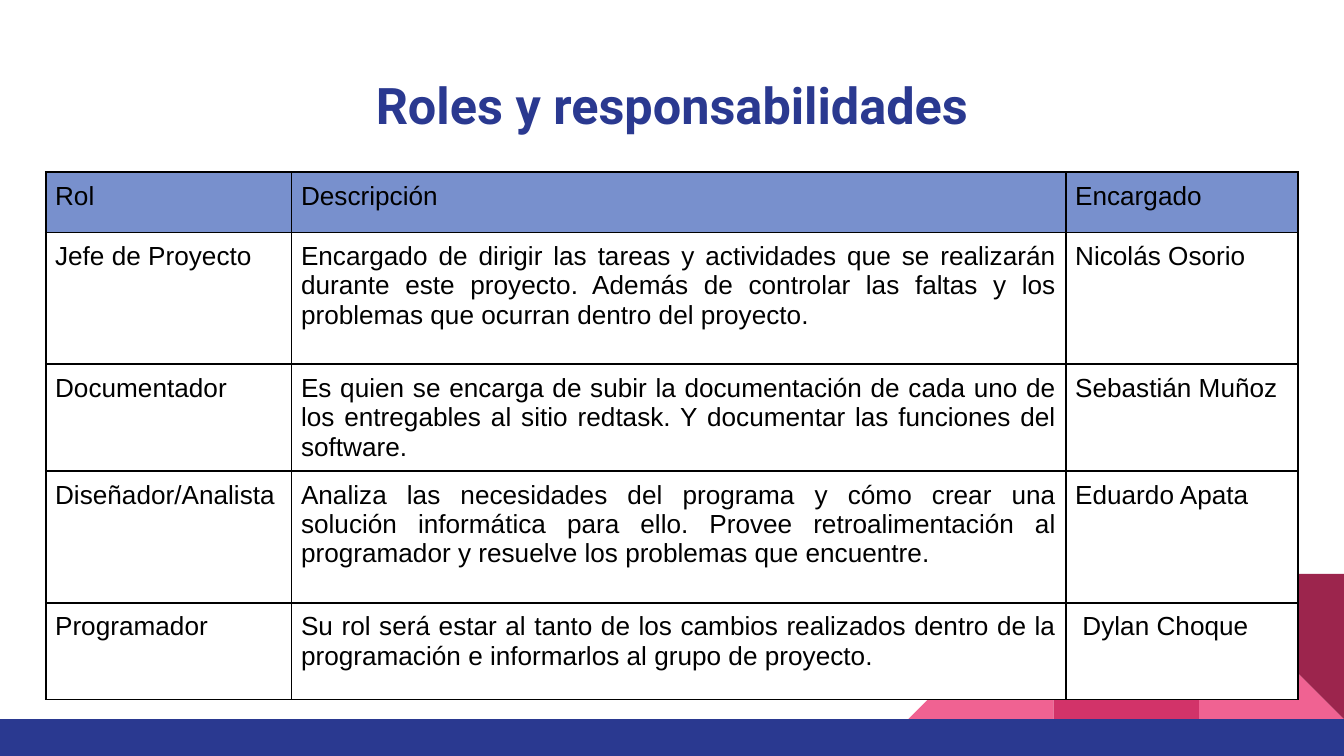
from lxml import etree
from pptx import Presentation
from pptx import util as u
from pptx.dml.color import RGBColor
from pptx.enum import shapes, text
from pptx.oxml.ns import qn

BLUE, PINK, ROSE, WINE = "2A3990", "F06292", "D23369", "9C254D"
HEADER, WHITE, BLACK = "7890CD", "FFFFFF", "000000"

COL_WIDTHS = [1.83, 5.76, 1.73]
ROW_HEIGHTS = [0.45, 0.98, 0.79, 0.98, 0.72]
ROLES = [
    ("Rol", "Descripción", "Encargado"),
    ("Jefe de Proyecto",
     "Encargado de dirigir las tareas y actividades que se realizarán durante "
     "este proyecto. Además de controlar las faltas y los problemas que "
     "ocurran dentro del proyecto.",
     "Nicolás Osorio"),
    ("Documentador",
     "Es quien se encarga de subir la documentación de cada uno de los "
     "entregables al sitio redtask. Y documentar las funciones del software.",
     "Sebastián Muñoz"),
    ("Diseñador/Analista",
     "Analiza las necesidades del programa y cómo crear una solución "
     "informática para ello. Provee retroalimentación al programador y "
     "resuelve los problemas que encuentre.",
     "Eduardo Apata"),
    ("Programador",
     "Su rol será estar al tanto de los cambios realizados dentro de la "
     "programación e informarlos al grupo de proyecto.",
     " Dylan Choque"),
]


def rgb(value):
    return RGBColor.from_string(value)


def format_text(p, font, size, color, align, bold=False):
    p.alignment = align
    for r in p.runs:
        r.font.name = font
        r.font.size = u.Pt(size)
        r.font.bold = bold
        r.font.color.rgb = rgb(color)


def add_block(s, kind, box, color, rotation=0, flip=False):
    sp = s.shapes.add_shape(kind, *map(u.Inches, box))
    sp.shadow.inherit = False
    sp.fill.solid()
    sp.fill.fore_color.rgb = rgb(color)
    sp.line.fill.background()
    sp.rotation = rotation
    if flip:
        sp._element.spPr.xfrm.set("flipH", "1")


def add_corner_art(s):
    side, top, right = 1.08, 4.27, 8.92
    tri, rect = shapes.MSO_SHAPE.RIGHT_TRIANGLE, shapes.MSO_SHAPE.RECTANGLE
    add_block(s, tri, (right, top, side, side), PINK)
    add_block(s, tri, (right - 2 * side, top, side, side), PINK, flip=True)
    add_block(s, rect, (right - side, top, side, side), ROSE)
    add_block(s, tri, (right, top, side, side), WINE, rotation=180)
    add_block(s, rect, (0, 5.35, 10, 0.28), BLUE)


def set_title(s, title):
    sp = s.shapes.title
    sp.left, sp.top, sp.width, sp.height = map(u.Inches, (0.34, 0.45, 9.32, 1.09))
    tf = sp.text_frame
    tf.text = title
    tf.word_wrap = True
    tf.auto_size = text.MSO_AUTO_SIZE.NONE
    tf.vertical_anchor = text.MSO_ANCHOR.TOP
    tf.margin_left = tf.margin_right = tf.margin_top = tf.margin_bottom = u.Inches(0.1)
    format_text(tf.paragraphs[0], "Roboto", 27, BLUE, text.PP_ALIGN.CENTER, bold=True)


def set_borders(cell, color, width):
    tc_pr = cell._tc.get_or_add_tcPr()
    for side in ("lnL", "lnR", "lnT", "lnB"):
        ln = etree.SubElement(tc_pr, qn(f"a:{side}"), w=str(u.Pt(width)))
        fill = etree.SubElement(ln, qn("a:solidFill"))
        etree.SubElement(fill, qn("a:srgbClr"), val=color)


def format_cell(cell, content, fill):
    set_borders(cell, BLACK, 1)
    cell.fill.solid()
    cell.fill.fore_color.rgb = rgb(fill)
    cell.margin_left = cell.margin_right = u.Inches(0.07)
    cell.margin_top = cell.margin_bottom = u.Inches(0.07)
    cell.vertical_anchor = text.MSO_ANCHOR.TOP
    cell.text_frame.text = content
    format_text(cell.text_frame.paragraphs[0], "Arial", 14, BLACK, text.PP_ALIGN.JUSTIFY)


def add_roles_table(s):
    box = (0.34, 1.28, sum(COL_WIDTHS), sum(ROW_HEIGHTS))
    table = s.shapes.add_table(len(ROLES), len(COL_WIDTHS), *map(u.Inches, box)).table
    for col, width in zip(table.columns, COL_WIDTHS):
        col.width = u.Inches(width)
    for i, (row, height) in enumerate(zip(table.rows, ROW_HEIGHTS)):
        row.height = u.Inches(height)
        for cell, content in zip(row.cells, ROLES[i]):
            format_cell(cell, content, WHITE if i else HEADER)


def main():
    prs = Presentation()
    # 16:9 page, 10 inches wide
    prs.slide_width = u.Inches(10)
    prs.slide_height = u.Inches(10 * 9 / 16)
    s = prs.slides.add_slide(prs.slide_layouts[5])
    # Decoration first, so that the table covers it
    add_corner_art(s)
    set_title(s, "Roles y responsabilidades")
    add_roles_table(s)
    prs.save("out.pptx")


if __name__ == "__main__":
    main()
